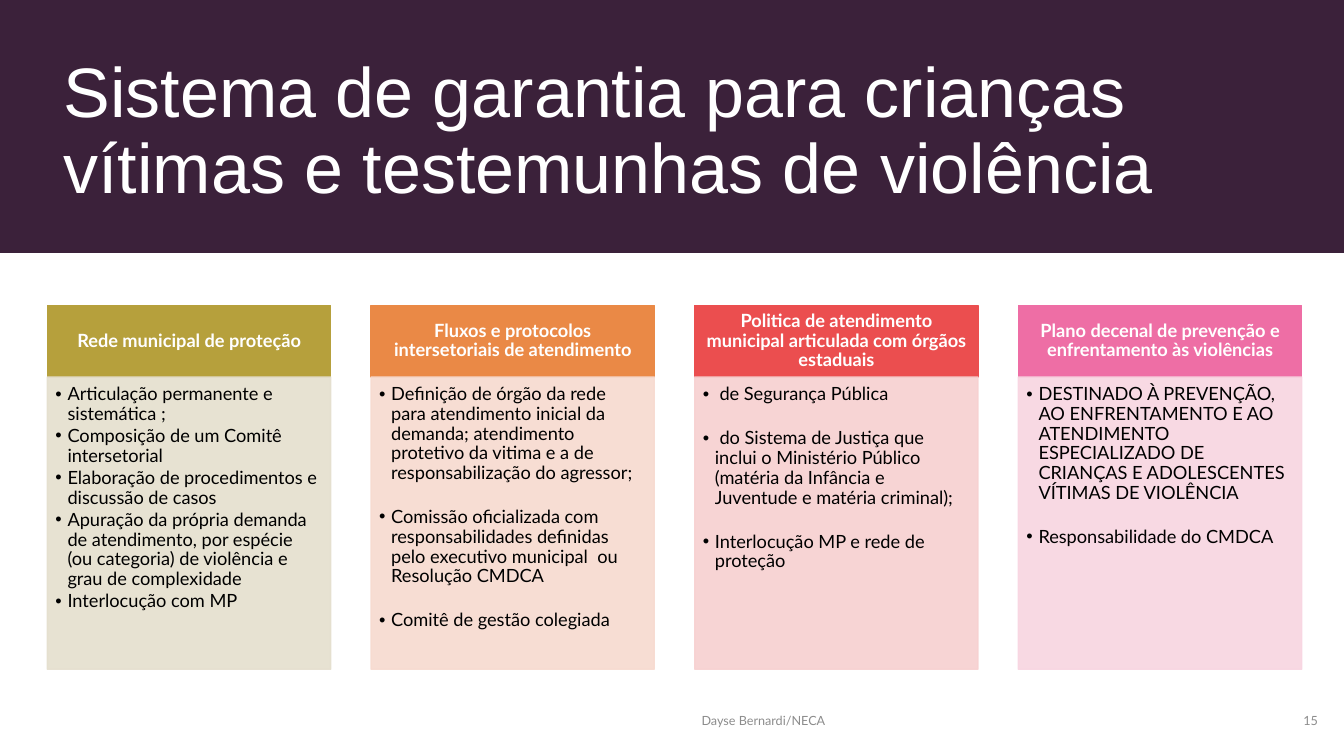
"""Builds the slide on the protection system for children who suffer or witness violence."""
from dataclasses import dataclass

from lxml.etree import SubElement
from pptx import Presentation
from pptx.dml.color import RGBColor
from pptx.enum.shapes import MSO_SHAPE as Shape
from pptx.enum.text import MSO_ANCHOR as Anchor, MSO_AUTO_SIZE as AutoSize, PP_ALIGN as Align
from pptx.oxml.ns import qn
from pptx.util import Pt

EMU_PER_PX = 9144


@dataclass(frozen=True)
class Theme:
    band: str = "3B213A"
    paper: str = "FFFFFF"
    ink: str = "000000"
    muted: str = "8C8C8C"
    title_font: str = "Arial"
    body_font: str = "Lato"
    title_size: int = 50
    body_size: int = 13
    footer_size: int = 9
    line_spacing: float = 0.9
    item_gap: float = 1.8
    wide_gap: float = 17.5
    indent: int = 12
    body_alpha: int = 90


COLUMNS = [
    ("Rede municipal de proteção", "B6A03C", "E5DFCE", False, [
        "Articulação permanente e sistemática ;",
        "Composição de um Comitê intersetorial",
        "Elaboração de procedimentos e discussão de casos",
        "Apuração da própria demanda de atendimento, por espécie (ou categoria) "
        "de violência e grau de complexidade",
        "Interlocução com MP",
    ]),
    ("Fluxos e protocolos intersetoriais de atendimento", "EA8946", "F7DACF", True, [
        "Definição de órgão da rede para atendimento inicial da demanda; "
        "atendimento protetivo da vitima e a de responsabilização do agressor;",
        "Comissão oficializada com responsabilidades definidas pelo executivo "
        "municipal  ou Resolução CMDCA",
        "Comitê de gestão colegiada",
    ]),
    ("Politica de atendimento municipal articulada com órgãos estaduais",
     "EB4E4F", "F7D0D0", True, [
         " de Segurança Pública",
         " do Sistema de Justiça que inclui o Ministério Público (matéria da "
         "Infância e Juventude e matéria criminal);",
         "Interlocução MP e rede de proteção",
     ]),
    ("Plano decenal de prevenção e enfrentamento às violências", "EE6EA5", "F8D5E1", True, [
        "DESTINADO À PREVENÇÃO, AO ENFRENTAMENTO E AO ATENDIMENTO ESPECIALIZADO "
        "DE CRIANÇAS E ADOLESCENTES VÍTIMAS DE VIOLÊNCIA",
        "Responsabilidade do CMDCA",
    ]),
]


def px(length):
    """Turn pixels into EMU."""
    return length * EMU_PER_PX


def write(para, text, *, font, size, color, bold=False, align=Align.LEFT, spacing=1.0, after=0):
    """Write one formatted span into a paragraph."""
    para.alignment = align
    para.line_spacing = spacing
    para.space_before = Pt(0)
    para.space_after = Pt(after)
    span = para.add_run()
    span.text = text
    span.font.name = font
    span.font.size = Pt(size)
    span.font.bold = bold
    span.font.color.rgb = RGBColor.from_string(color)


def add_bullet(para, indent):
    """Give a paragraph a round bullet with a hanging indent."""
    props = para._p.get_or_add_pPr()
    props.set("marL", str(px(indent)))
    props.set("indent", str(-px(indent)))
    SubElement(props, qn("a:buFont")).set("typeface", "Arial")
    SubElement(props, qn("a:buChar")).set("char", "•")


def set_frame(frame, anchor, insets):
    """Set wrapping, anchor and insets of a text frame."""
    frame.word_wrap = True
    frame.auto_size = AutoSize.NONE
    frame.vertical_anchor = anchor
    frame.margin_left, frame.margin_top, frame.margin_right, frame.margin_bottom = map(px, insets)


class SlideBuilder:
    """Hold the theme and the current slide, and draw its elements."""

    def __init__(self, page, theme):
        """Keep the page and the theme."""
        self.page = page
        self.theme = theme

    def panel(self, left, top, width, height, color, outlined=True, alpha=100):
        """Draw a filled rectangle."""
        box = self.page.shapes.add_shape(Shape.RECTANGLE, *map(px, (left, top, width, height)))
        box.shadow.inherit = False
        box.fill.solid()
        box.fill.fore_color.rgb = RGBColor.from_string(color)
        if outlined:
            box.line.color.rgb = RGBColor.from_string(color)
            box.line.width = Pt(1)
        else:
            box.line.fill.background()
        if alpha < 100:
            for tint in box._element.spPr.iter(qn("a:srgbClr")):
                SubElement(tint, qn("a:alpha")).set("val", str(alpha * 1000))
        return box

    def title(self, text, left, top, width, height):
        """Move, format and raise the title placeholder."""
        box = self.page.shapes.title
        box.left, box.top, box.width, box.height = map(px, (left, top, width, height))
        set_frame(box.text_frame, Anchor.BOTTOM, (10, 5, 10, 5))
        write(box.text_frame.paragraphs[0], text, font=self.theme.title_font,
              size=self.theme.title_size, color=self.theme.paper,
              spacing=self.theme.line_spacing)
        self.page.shapes._spTree.append(box._element)

    def header(self, text, left, top, width, height, color):
        """Draw the coloured heading of a column."""
        frame = self.panel(left, top, width, height, color).text_frame
        set_frame(frame, Anchor.MIDDLE, (10, 6, 10, 6))
        write(frame.paragraphs[0], text, font=self.theme.body_font, size=self.theme.body_size,
              color=self.theme.paper, bold=True, align=Align.CENTER,
              spacing=self.theme.line_spacing)

    def bullets(self, items, left, top, width, height, color, gap):
        """Draw the pale body of a column with its bullet list."""
        frame = self.panel(left, top, width, height, color, alpha=self.theme.body_alpha).text_frame
        set_frame(frame, Anchor.TOP, (8, 8, 10, 11))
        for index, item in enumerate(items):
            para = frame.add_paragraph() if index else frame.paragraphs[0]
            write(para, item, font=self.theme.body_font, size=self.theme.body_size,
                  color=self.theme.ink, spacing=self.theme.line_spacing, after=gap)
            add_bullet(para, self.theme.indent)

    def footer(self, text, left, width, align):
        """Write a small grey text at the foot of the slide."""
        box = self.page.shapes.add_textbox(*map(px, (left, 695, width, 40)))
        set_frame(box.text_frame, Anchor.MIDDLE, (10, 5, 10, 5))
        write(box.text_frame.paragraphs[0], text, font=self.theme.body_font,
              size=self.theme.footer_size, color=self.theme.muted, align=align, after=6)


def main():
    """Build and save the deck."""
    deck = Presentation()
    deck.slide_width, deck.slide_height = px(1333), px(750)
    theme = Theme()
    slide = SlideBuilder(deck.slides.add_slide(deck.slide_layouts[5]), theme)

    slide.panel(0, 0, 1333, 251, theme.band, outlined=False)
    slide.title("Sistema de garantia para crianças vítimas e testemunhas de violência",
                53, 40, 1189, 172)
    for index, (heading, strong, pale, spaced, items) in enumerate(COLUMNS):
        left = 47 + index * 321
        gap = theme.wide_gap if spaced else theme.item_gap
        slide.header(heading, left, 303, 281, 71, strong)
        slide.bullets(items, left, 374, 281, 290, pale, gap)
    slide.footer("Dayse Bernardi/NECA", 686, 450, Align.LEFT)
    slide.footer("15", 1177, 140, Align.RIGHT)

    deck.save("out.pptx")


if __name__ == "__main__":
    main()
